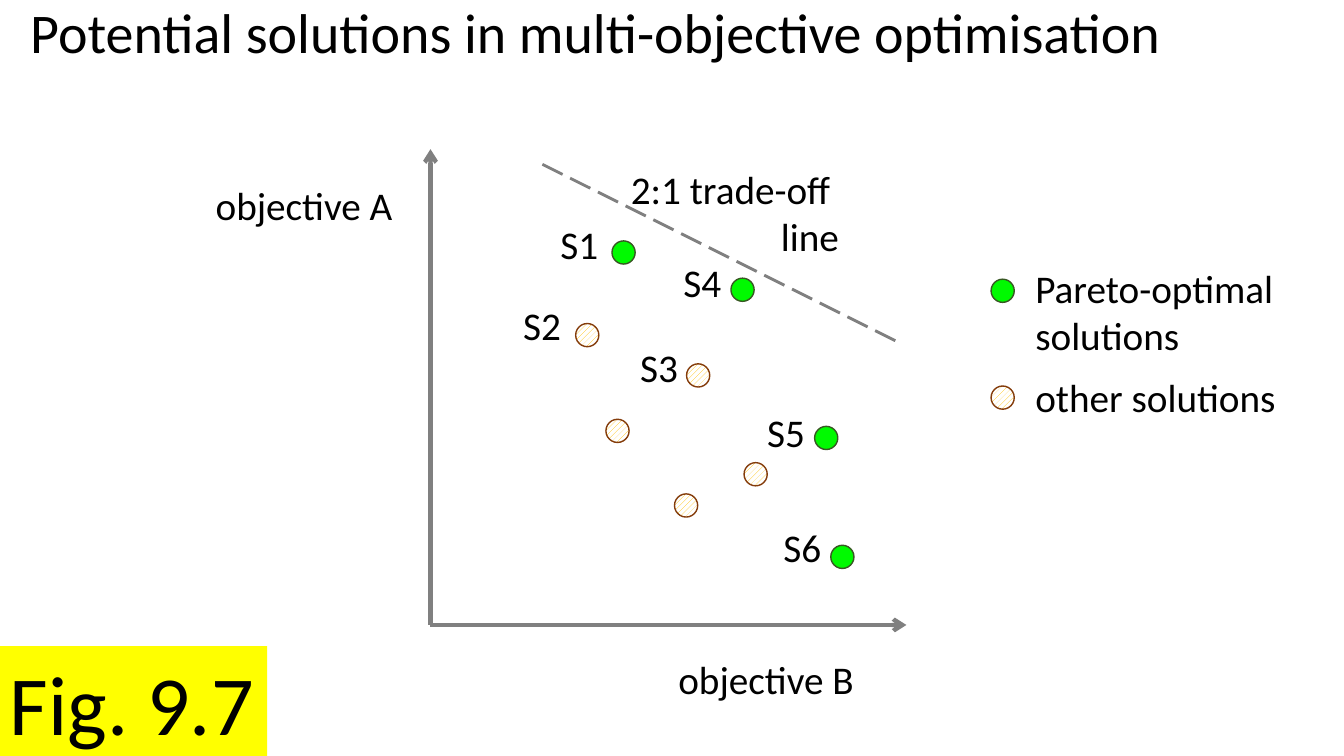
from dataclasses import dataclass
from lxml.etree import SubElement
from pptx import Presentation
from pptx.dml.color import RGBColor as RGB
from pptx.enum.dml import MSO_LINE as Dash, MSO_PATTERN as Pat
from pptx.enum.shapes import MSO_CONNECTOR as Conn, MSO_SHAPE as Geo
from pptx.enum.text import MSO_ANCHOR as Anchor, MSO_AUTO_SIZE as Auto, PP_ALIGN as Align
from pptx.oxml.ns import qn
from pptx.util import Inches, Pt


@dataclass(frozen=True)
class Theme:
    font: str = "Calibri"
    title: int = 40
    body: int = 28
    tag: int = 60
    ink: RGB = RGB(0, 0, 0)
    axis: RGB = RGB(0x80, 0x80, 0x80)
    best: RGB = RGB(0, 0xFA, 0)
    rim: RGB = RGB(0x38, 0x57, 0x23)
    hatch: RGB = RGB(0xFF, 0xC0, 0)
    blank: RGB = RGB(0xFF, 0xFF, 0xFF)
    edge: RGB = RGB(0x84, 0x3C, 0x0B)
    mark: RGB = RGB(0xFF, 0xFF, 0)


theme = Theme()
deck = Presentation()
deck.slide_width, deck.slide_height = Inches(13.33), Inches(7.5)
slide = deck.slides.add_slide(deck.slide_layouts[5])
shapes = slide.shapes


def grid(*cells):
    """Turn counts of grid cells, ten to the inch, into lengths."""
    return [Inches(n / 10) for n in cells]


def write(box, text, size, align=Align.LEFT):
    frame = box.text_frame
    frame.text = text
    frame.vertical_anchor = Anchor.TOP
    para = frame.paragraphs[0]
    para.alignment = align
    for run in para.runs:
        font = run.font
        font.name, font.size = theme.font, Pt(size)
        font.color.rgb = theme.ink
    return frame


# Title
title = shapes.title
title.left, title.top, title.width, title.height = grid(2, 0, 127.7, 17.1)
frame = write(title, "Potential solutions in multi-objective optimisation", theme.title)
frame.word_wrap = True
frame.auto_size = Auto.NONE
frame.paragraphs[0].line_spacing = 0.9

# Axes and trade-off line
root = (42.7, 62)
for start, end, width, arrow in [
    (root, (42.7, 14.8), 3, True),
    (root, (89.9, 62), 3, True),
    ((53.8, 16.3), (89.2, 34), 2, False),
]:
    line = shapes.add_connector(Conn.STRAIGHT, *grid(*start, *end))
    line.line.color.rgb = theme.axis
    line.line.width = Pt(width)
    if arrow:
        SubElement(line.line._get_or_add_ln(), qn("a:tailEnd"), type="arrow")
    else:
        line.line.dash_style = Dash.LONG_DASH
    SubElement(line._element.spPr, qn("a:effectLst"))

# Solutions, with the two legend keys last in their lists
best = [(60.7, 23.9), (72.5, 27.6), (80.8, 42.3), (82.4, 54.1), (98.3, 27.7)]
other = [(57.1, 32.1), (68.1, 36.1), (60.1, 41.6), (73.8, 45.9), (66.9, 49), (98.3, 38.3)]
for spot in best + other:
    dot = shapes.add_shape(Geo.OVAL, *grid(*spot, 2.3, 2.3))
    dot.shadow.inherit = False
    dot.line.width = Pt(1)
    if spot in best:
        dot.fill.solid()
        dot.fill.fore_color.rgb = theme.best
        dot.line.color.rgb = theme.rim
    else:
        dot.fill.patterned()
        dot.fill.pattern = Pat.WIDE_UPWARD_DIAGONAL
        dot.fill.fore_color.rgb = theme.hatch
        dot.fill.back_color.rgb = theme.blank
        dot.line.color.rgb = theme.edge

# Labels
names = [(54.6, 21.4), (50.9, 29.4), (62.5, 33.6), (66.8, 25.1), (75.1, 40), (76.7, 51.4)]
labels = [(f"S{n}", (*spot, 5.8, 5.7), Align.LEFT) for n, spot in enumerate(names, 1)]
labels += [
    ("objective A", (20.4, 17.5, 19.8, 5.7), Align.LEFT),
    ("objective B", (66.3, 64.5, 19.6, 5.7), Align.LEFT),
    ("Pareto-optimal \vsolutions", (101.7, 25.7, 26.8, 10.4), Align.LEFT),
    ("other solutions", (101.7, 36.5, 26.1, 5.7), Align.LEFT),
    ("2:1 trade-off \vline", (61.2, 15.9, 23, 10.4), Align.RIGHT),
]
for text, area, align in labels:
    frame = write(shapes.add_textbox(*grid(*area)), text, theme.body, align)
    frame.word_wrap = False
    frame.auto_size = Auto.SHAPE_TO_FIT_TEXT

# Figure tag
tag = shapes.add_shape(Geo.RECTANGLE, *grid(0, 64.1, 26.5, 11.1))
tag.shadow.inherit = False
tag.fill.solid()
tag.fill.fore_color.rgb = theme.mark
tag.line.fill.background()
frame = write(tag, "Fig. 9.7", theme.tag)
frame.word_wrap = False
frame.auto_size = Auto.SHAPE_TO_FIT_TEXT

deck.save("out.pptx")
